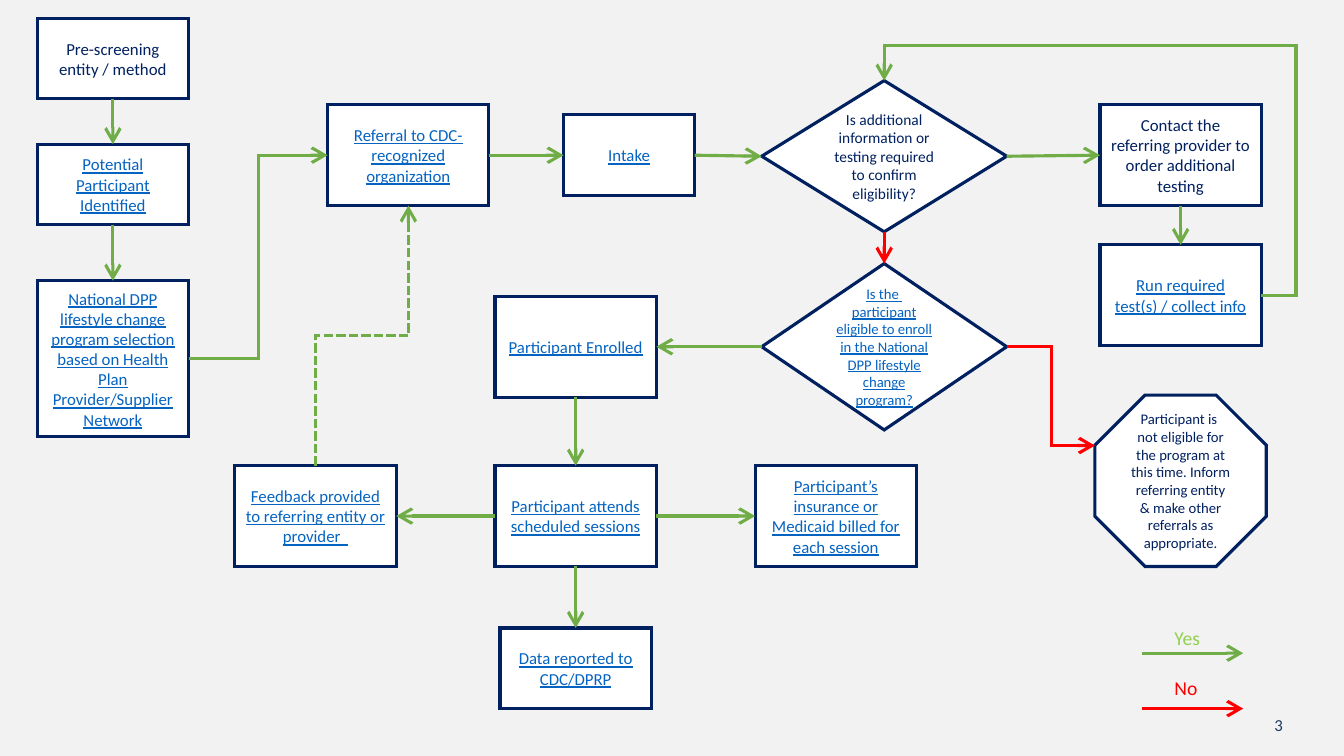
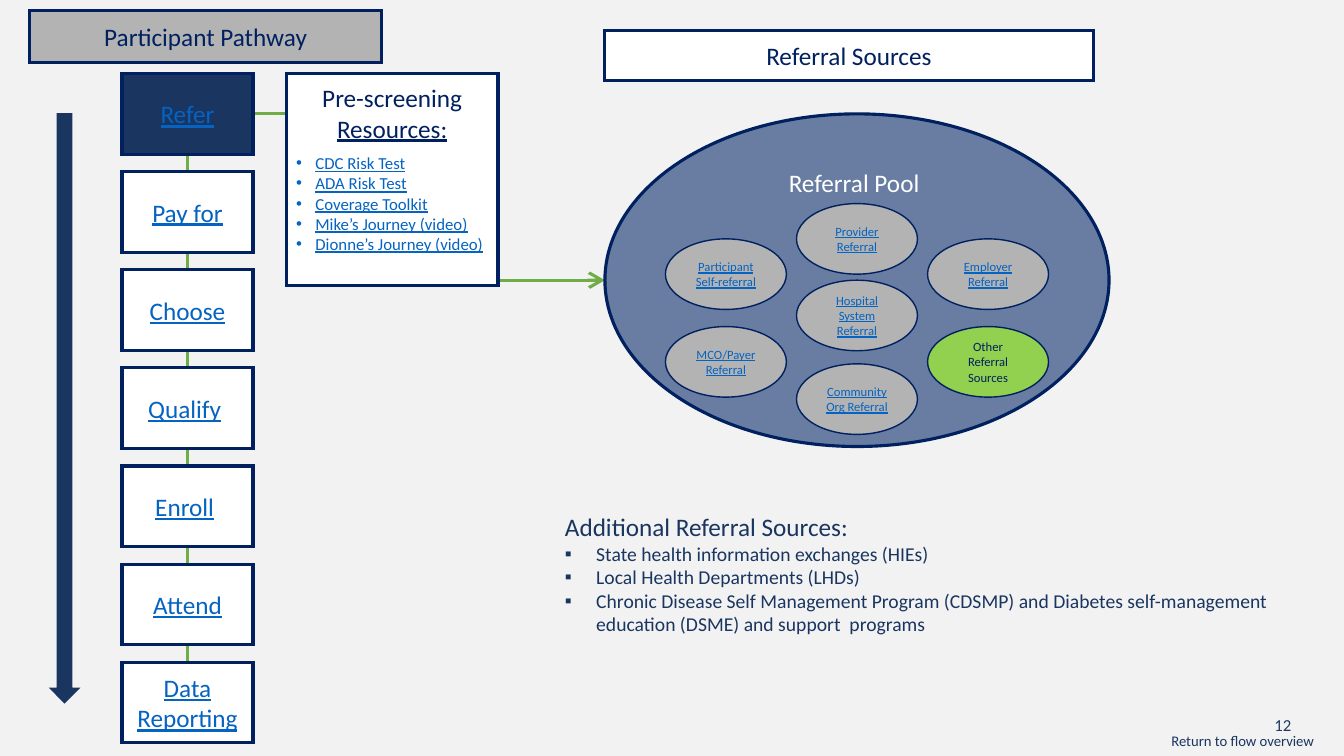
"""Build two slides: a referral flowchart and the referral sources page."""
from math import cos, radians, sin

from lxml import etree
from pptx import Presentation
from pptx import util as u
from pptx.dml.color import RGBColor
from pptx.enum import dml, shapes, text
from pptx.oxml.ns import qn

NAVY = RGBColor(0x00, 0x20, 0x60)
INK = RGBColor(0x19, 0x35, 0x60)
NUMBER = RGBColor(0x20, 0x38, 0x64)
BLUE = RGBColor(0x05, 0x63, 0xC1)
GREEN = RGBColor(0x70, 0xAD, 0x47)
LIME = RGBColor(0x92, 0xD0, 0x50)
RED = RGBColor(0xFF, 0x00, 0x00)
WHITE = RGBColor(0xFF, 0xFF, 0xFF)
GREY = RGBColor(0xB3, 0xB3, 0xB3)
PALE = RGBColor(0xF2, 0xF2, 0xF2)
POOL = RGBColor(0x68, 0x7D, 0xA1)
FONT = "Calibri"
RECT = shapes.MSO_SHAPE.RECTANGLE
OVAL = shapes.MSO_SHAPE.OVAL
DECISION = shapes.MSO_SHAPE.FLOWCHART_DECISION
OCTAGON = shapes.MSO_SHAPE.OCTAGON
STRAIGHT = shapes.MSO_CONNECTOR.STRAIGHT
ELBOW = shapes.MSO_CONNECTOR.ELBOW
LEFT, CENTER = text.PP_ALIGN.LEFT, text.PP_ALIGN.CENTER
TOP_ANCHOR, MIDDLE = text.MSO_ANCHOR.TOP, text.MSO_ANCHOR.MIDDLE
TOP, LEFT_SIDE, BOTTOM, RIGHT_SIDE = range(4)


def card(page, kind, centre, size, paras, fill=WHITE, edge=NAVY, weight=2.25,
         anchor=MIDDLE, wrap=True):
    """Add a shape, or a text box when kind is None, with (bullet, indent, gap, spans) paragraphs."""
    frame = [u.Inches(v) for v in (centre[0] - size[0] / 2, centre[1] - size[1] / 2, *size)]
    if kind is None:
        box = page.shapes.add_textbox(*frame)
    else:
        box = page.shapes.add_shape(kind, *frame)
        box.shadow.inherit = False
        box.fill.solid()
        box.fill.fore_color.rgb = fill
        box.line.color.rgb = edge
        box.line.width = u.Pt(weight)
        etree.SubElement(box._element.spPr.find(qn("a:ln")), qn("a:miter"), lim="800000")
    body = box.text_frame
    body.word_wrap = wrap
    body.vertical_anchor = anchor
    for index, (bullet, indent, gap, spans) in enumerate(paras):
        para = body.add_paragraph() if index else body.paragraphs[0]
        para.alignment = LEFT if bullet or kind is None else CENTER
        if gap:
            para.space_before = u.Pt(gap)
        if bullet:
            props = para._p.get_or_add_pPr()
            props.set("marL", str(u.Inches(indent)))
            props.set("indent", str(-u.Inches(indent)))
            etree.SubElement(props, qn("a:buFont"), typeface="Arial")
            etree.SubElement(props, qn("a:buChar"), char=bullet)
        for words, points, colour, underlined in spans:
            span = para.add_run()
            span.text = words
            span.font.name = FONT
            span.font.size = u.Pt(points)
            span.font.color.rgb = colour
            span.font.underline = underlined
    return box


def link(page, begin, end, colour=GREEN, kind=STRAIGHT, arrow="tailEnd", turn=0, dash=None):
    """Add a connector between two points, turned about its middle by whole quarter turns."""
    across, down = end[0] - begin[0], end[1] - begin[1]
    c, s = round(cos(radians(turn))), round(sin(radians(turn)))
    half = ((across * c + down * s) / 2, (down * c - across * s) / 2)
    middle = ((begin[0] + end[0]) / 2, (begin[1] + end[1]) / 2)
    ends = [m + sign * h for sign in (-1, 1) for m, h in zip(middle, half)]
    line = page.shapes.add_connector(kind, *[u.Inches(v) for v in ends])
    line.line.color.rgb = colour
    line.line.width = u.Pt(2.25)
    if dash:
        line.line.dash_style = dash
    props = line._element.spPr
    if turn:
        props.find(qn("a:xfrm")).set("rot", str(turn * 60000))
    stroke = props.find(qn("a:ln"))
    etree.SubElement(stroke, qn("a:miter"), lim="800000")
    if arrow:
        etree.SubElement(stroke, qn("a:" + arrow), type="arrow", w="lg", len="lg")
    etree.SubElement(props, qn("a:effectLst"))
    return line


deck = Presentation()
deck.slide_width, deck.slide_height = u.Inches(13.33), u.Inches(7.5)
deck.slide_master.background.fill.solid()
deck.slide_master.background.fill.fore_color.rgb = PALE
pages = [deck.slides.add_slide(deck.slide_layouts[6]) for _ in range(2)]
flow, sources = pages
for page, number in zip(pages, ("3", "12")):
    card(page, None, (12.74, 7.19), (0.4, 0.3), [("", 0, 0, [(number, 12, NUMBER, False)])],
         anchor=TOP_ANCHOR, wrap=False)

COL = {"start": 1.12, "feedback": 3.13, "refer": 4.05, "enroll": 5.71, "intake": 6.24,
       "bill": 8.29, "decide": 8.77, "test": 11.71}
ROW = {"intake": 1.54, "enroll": 3.44, "attend": 5.12, "report": 6.63}
WIDE, SMALL = (1.6, 1), (1.5, 0.8)
nodes = {
    "screen": (RECT, COL["start"], 0.58, SMALL, "Pre-screening entity / method", 12, NAVY),
    "identify": (RECT, COL["start"], 1.83, SMALL, "Potential Participant Identified", 12, BLUE),
    "select": (RECT, COL["start"], 3.56, (1.5, 1.55),
               "National DPP lifestyle change program selection based on Health Plan "
               "Provider/Supplier Network", 12, BLUE),
    "refer": (RECT, COL["refer"], ROW["intake"], WIDE,
              "Referral to CDC-recognized organization", 12, BLUE),
    "intake": (RECT, COL["intake"], ROW["intake"], (1.3, 0.8), "Intake", 12, BLUE),
    "more": (DECISION, COL["decide"], 1.55, (2.43, 1.5),
             "Is additional information or testing required to confirm eligibility?", 11, NAVY),
    "eligible": (DECISION, COL["decide"], ROW["enroll"], (2.43, 1.65),
                 "Is the  participant eligible to enroll in the National DPP lifestyle "
                 "change program?", 10.5, BLUE),
    "contact": (RECT, COL["test"], ROW["intake"], WIDE,
                "Contact the referring provider to order additional testing", 12, NAVY),
    "run": (RECT, COL["test"], 2.93, WIDE, "Run required test(s) / collect info", 12, BLUE),
    "enroll": (RECT, COL["enroll"], ROW["enroll"], WIDE, "Participant Enrolled", 12, BLUE),
    "attend": (RECT, COL["enroll"], ROW["attend"], WIDE,
               "Participant attends scheduled sessions", 12, BLUE),
    "feedback": (RECT, COL["feedback"], ROW["attend"], WIDE,
                 "Feedback provided to referring entity or provider  ", 12, BLUE),
    "bill": (RECT, COL["bill"], ROW["attend"], WIDE,
             "Participant’s insurance or Medicaid billed for each session", 12, BLUE),
    "report": (RECT, COL["enroll"], ROW["report"], SMALL, "Data reported to CDC/DPRP", 12, BLUE),
    "stop": (OCTAGON, COL["test"], 4.77, (1.7, 1.7),
             "Participant is  not eligible for the program at this time. Inform referring "
             "entity & make other referrals as appropriate.", 10.5, NAVY),
}
boxes = {}
for name, (kind, x, y, size, words, points, colour) in nodes.items():
    boxes[name] = card(flow, kind, (x, y), size,
                       [("", 0, 0, [(words, points, colour, colour == BLUE)])])

for source, out, target, into, colour, kind in [
    ("screen", BOTTOM, "identify", TOP, GREEN, STRAIGHT),
    ("identify", BOTTOM, "select", TOP, GREEN, STRAIGHT),
    ("select", RIGHT_SIDE, "refer", LEFT_SIDE, GREEN, ELBOW),
    ("refer", RIGHT_SIDE, "intake", LEFT_SIDE, GREEN, STRAIGHT),
    ("intake", RIGHT_SIDE, "more", LEFT_SIDE, GREEN, STRAIGHT),
    ("more", RIGHT_SIDE, "contact", LEFT_SIDE, GREEN, STRAIGHT),
    ("more", BOTTOM, "eligible", TOP, RED, STRAIGHT),
    ("contact", BOTTOM, "run", TOP, GREEN, STRAIGHT),
    ("eligible", LEFT_SIDE, "enroll", RIGHT_SIDE, GREEN, STRAIGHT),
    ("enroll", BOTTOM, "attend", TOP, GREEN, STRAIGHT),
    ("attend", LEFT_SIDE, "feedback", RIGHT_SIDE, GREEN, STRAIGHT),
    ("attend", RIGHT_SIDE, "bill", LEFT_SIDE, GREEN, STRAIGHT),
    ("attend", BOTTOM, "report", TOP, GREEN, STRAIGHT),
]:
    arrow = link(flow, (0, 0), (0, 0), colour, kind)
    arrow.begin_connect(boxes[source], out)
    arrow.end_connect(boxes[target], into)

link(flow, (9.99, ROW["enroll"]), (10.86, 4.42), RED, ELBOW)
link(flow, (COL["feedback"], 4.62), (COL["refer"], 2.04), kind=ELBOW, turn=90,
     dash=dml.MSO_LINE.SQUARE_DOT)
retest = link(flow, (COL["decide"], 0.8), (12.51, 2.93), kind=ELBOW, arrow="headEnd", turn=270)
geometry = retest._element.spPr.find(qn("a:prstGeom"))
geometry.set("prst", "bentConnector4")
guides = geometry.find(qn("a:avLst"))
for name, value in (("adj1", -16200), ("adj2", 109200)):
    etree.SubElement(guides, qn("a:gd"), name=name, fmla=f"val {value}")

for words, middle, row, label, colour in [("Yes", 6.33, 6.48, LIME, GREEN),
                                          ("No", 6.83, 7.03, RED, RED)]:
    card(flow, None, (11.9, middle), (0.7, 0.34), [("", 0, 0, [(words, 14, label, False)])],
         anchor=TOP_ANCHOR)
    link(flow, (11.33, row), (12.33, row), colour)

card(sources, shapes.MSO_SHAPE.DOWN_ARROW, (0.64, 4.05), (0.28, 5.84), [], INK, INK, 1)
for words, centre, size, fill in [("Participant Pathway", (2.04, 0.36), (3.49, 0.52), GREY),
                                  ("Referral Sources", (8.42, 0.55), (4.85, 0.5), WHITE)]:
    card(sources, RECT, centre, size, [("", 0, 0, [(words, 18, NAVY, False)])], fill)

STEP_X, STEP_Y, STEP_GAP = 1.86, 1.13, 5.84 / 6
link(sources, (STEP_X, 1.53), (STEP_X, 6.57), arrow=None)
link(sources, (2.51, STEP_Y), (6, 2.78), kind=ELBOW)
steps = ["Refer", "Pay for", "Choose", "Qualify ", "Enroll ", "Attend", "Data Reporting"]
for index, words in enumerate(steps):
    spans = [(words.rstrip(), 18, BLUE, True)]
    if words.endswith(" "):
        spans.append((" ", 18, NAVY, False))
    card(sources, RECT, (STEP_X, STEP_Y + index * STEP_GAP), (1.3, 0.8),
         [("", 0, 0, spans)], WHITE if index else INK)

resources = ["CDC Risk Test", "ADA Risk Test", "Coverage Toolkit", "Mike’s Journey (video)",
             "Dionne’s Journey (video)"]
panel = card(sources, RECT, (3.89, 1.78), (2.1, 2.1),
             [("", 0, 0, [("Pre-screening ", 18, NAVY, False), ("Resources:", 18, NAVY, True)])]
             + [("•", 0.19, 0 if index else 7, [(words, 12, BLUE, True)])
                for index, words in enumerate(resources)], anchor=TOP_ANCHOR)
panel.text_frame.margin_top = u.Inches(0.09)

card(sources, OVAL, (8.5, 2.78), (5, 3.3), [("", 0, 0, [("Referral Pool ", 18, WHITE, False)])],
     POOL, anchor=TOP_ANCHOR)
pool = [(-1, ["Participant Self-referral", "MCO/Payer Referral"], [2.72, 3.59]),
        (0, ["Provider Referral", "Hospital System Referral", "Community Org Referral"],
         [2.37, 3.13, 3.96]),
        (1, ["Employer Referral", "Other Referral Sources"], [2.72, 3.59])]
for column, labels, rows in pool:
    for words, y in zip(labels, rows):
        other = words.startswith("Other")
        card(sources, OVAL, (8.5 + 1.3 * column, y), (1.2, 0.7),
             [("", 0, 0, [(words, 9, NAVY if other else BLUE, not other)])],
             LIME if other else GREY, weight=1)

additional = ["State health information exchanges (HIEs)", "Local Health Departments (LHDs)",
              "Chronic Disease Self Management Program (CDSMP) and Diabetes self-management "
              "education (DSME) and support  programs"]
card(sources, None, (9.1, 5.7), (7.19, 1.35),
     [("", 0, 0, [("Additional Referral Sources:", 18, INK, False)])]
     + [("▪", 0.31, 0, [(words, 14, INK, False)]) for words in additional], anchor=TOP_ANCHOR)
card(sources, None, (12.34, 7.35), (1.64, 0.28),
     [("", 0, 0, [("Return to flow overview", 10.5, INK, False)])], anchor=TOP_ANCHOR, wrap=False)

deck.save("out.pptx")
